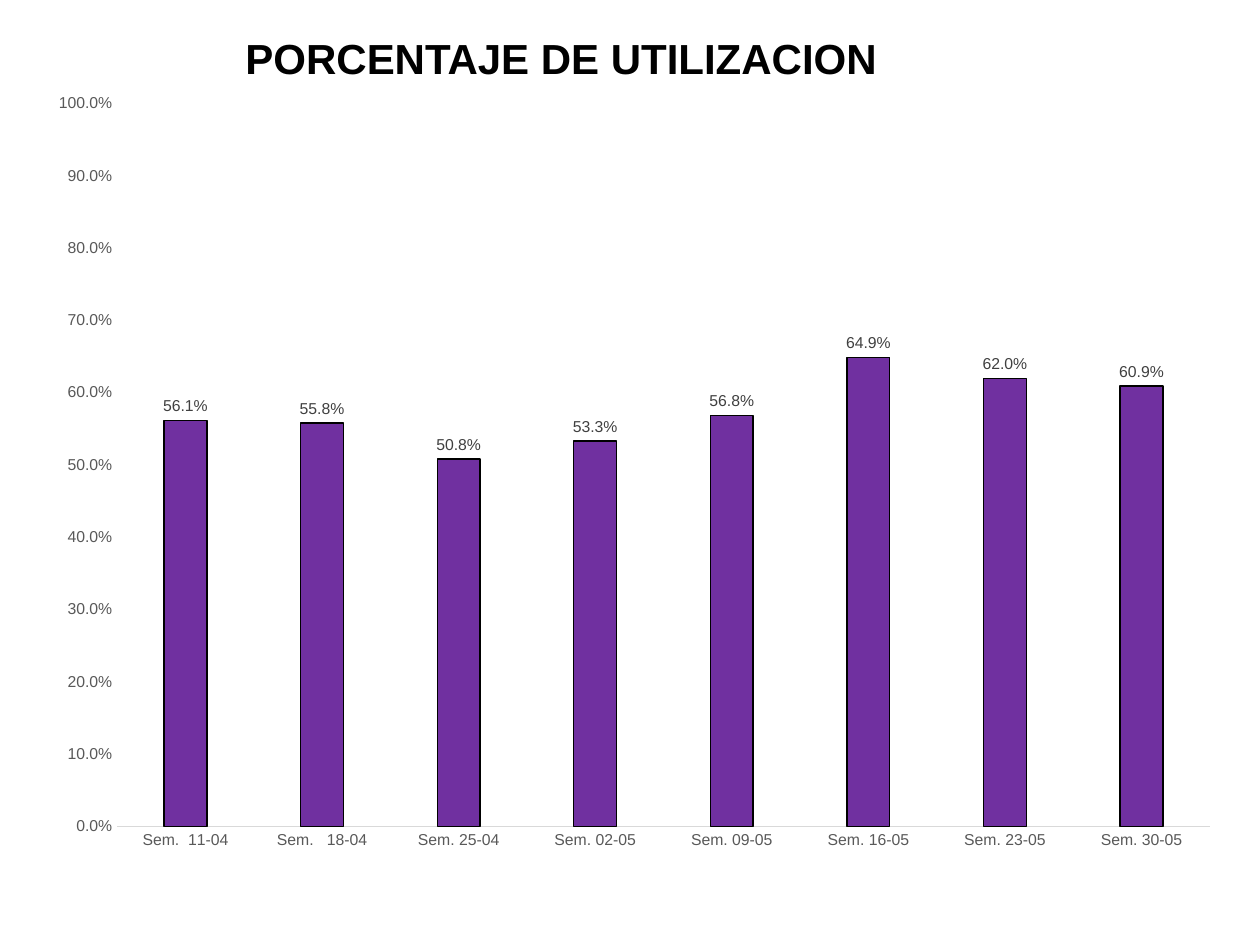
from lxml import etree
from pptx import Presentation
from pptx.chart.data import CategoryChartData
from pptx.dml.color import RGBColor
from pptx.enum.chart import XL_CHART_TYPE, XL_LABEL_POSITION, XL_TICK_MARK
from pptx.enum.text import MSO_AUTO_SIZE
from pptx.oxml.ns import qn
from pptx.util import Pt

COLUMNS = XL_CHART_TYPE.COLUMN_CLUSTERED
OUTSIDE_END = XL_LABEL_POSITION.OUTSIDE_END
NO_TICK = XL_TICK_MARK.NONE
GROW = MSO_AUTO_SIZE.SHAPE_TO_FIT_TEXT

BLACK = RGBColor(0x00, 0x00, 0x00)
PURPLE = RGBColor(0x70, 0x30, 0xA0)
AXIS_GRAY = RGBColor(0x59, 0x59, 0x59)
LABEL_GRAY = RGBColor(0x40, 0x40, 0x40)
LINE_GRAY = RGBColor(0xD9, 0xD9, 0xD9)
FONT = "Arial"
PERCENT = "0.0%"

# Content
TITLE = "PORCENTAJE DE UTILIZACION"
UTILIZATION = [
    ("Sem.  11-04", 0.561),
    ("Sem.   18-04", 0.558),
    ("Sem. 25-04", 0.508),
    ("Sem. 02-05", 0.533),
    ("Sem. 09-05", 0.568),
    ("Sem. 16-05", 0.649),
    ("Sem. 23-05", 0.62),
    ("Sem. 30-05", 0.609),
]
PLOT_AREA = {"x": 0.085, "y": 0.017, "w": 0.91, "h": 0.872}


def style_font(font, size, color, bold=False):
    font.name = FONT
    font.size = Pt(size)
    font.bold = bold
    font.color.rgb = color


def add_text(page, text, left, top, width, height, **style):
    box = page.shapes.add_textbox(Pt(left), Pt(top), Pt(width), Pt(height))
    frame = box.text_frame
    frame.word_wrap = True
    frame.auto_size = GROW
    span = frame.paragraphs[0].add_run()
    span.text = text
    style_font(span.font, **style)


def place_plot(chart, area):
    """Fix the inner plot area as fractions of the chart."""
    plot_area = chart._chartSpace.chart.plotArea
    for old in plot_area.findall(qn("c:layout")):
        plot_area.remove(old)
    layout = etree.Element(qn("c:layout"))
    plot_area.insert(0, layout)
    manual = etree.SubElement(layout, qn("c:manualLayout"))
    settings = [("layoutTarget", "inner"), ("xMode", "edge"), ("yMode", "edge")]
    for name, value in settings + list(area.items()):
        etree.SubElement(manual, qn(f"c:{name}")).set("val", str(value))


def add_column_chart(page, rows, left, top, width, height):
    data = CategoryChartData(number_format=PERCENT)
    data.categories = [week for week, _ in rows]
    data.add_series("Series 1", [share for _, share in rows])
    chart = page.shapes.add_chart(
        COLUMNS, Pt(left), Pt(top), Pt(width), Pt(height), data).chart
    chart.has_title = False
    chart.has_legend = False
    style_font(chart.font, 10, BLACK)
    place_plot(chart, PLOT_AREA)

    # Axes
    for axis in (chart.category_axis, chart.value_axis):
        axis.major_tick_mark = axis.minor_tick_mark = NO_TICK
        axis.has_major_gridlines = False
        style_font(axis.tick_labels.font, 9, AXIS_GRAY)
    week_line = chart.category_axis.format.line
    week_line.color.rgb = LINE_GRAY
    week_line.width = Pt(0.75)
    share_axis = chart.value_axis
    share_axis.format.line.fill.background()
    share_axis.minimum_scale, share_axis.maximum_scale = 0, 1
    share_axis.major_unit = 0.1
    share_axis.tick_labels.number_format = PERCENT
    share_axis.tick_labels.number_format_is_linked = False

    # Columns and their labels
    plot = chart.plots[0]
    plot.vary_by_categories = False
    plot.gap_width = 219
    plot.overlap = -27
    series = plot.series[0]
    series.format.fill.solid()
    series.format.fill.fore_color.rgb = PURPLE
    series.format.line.color.rgb = BLACK
    series.format.line.width = Pt(0.75)
    labels = series.data_labels
    labels.show_value = True
    labels.position = OUTSIDE_END
    labels.number_format = PERCENT
    labels.number_format_is_linked = False
    style_font(labels.font, 9, LABEL_GRAY)


def main():
    deck = Presentation()
    deck.slide_width, deck.slide_height = Pt(720), Pt(540)
    page = deck.slides.add_slide(deck.slide_layouts[6])
    add_column_chart(page, UTILIZATION, 8.64, 51.12, 686.16, 473.76)
    add_text(page, TITLE, 133.2, 15.12, 415.44, 36,
             size=24, color=BLACK, bold=True)
    deck.save("out.pptx")


if __name__ == "__main__":
    main()
